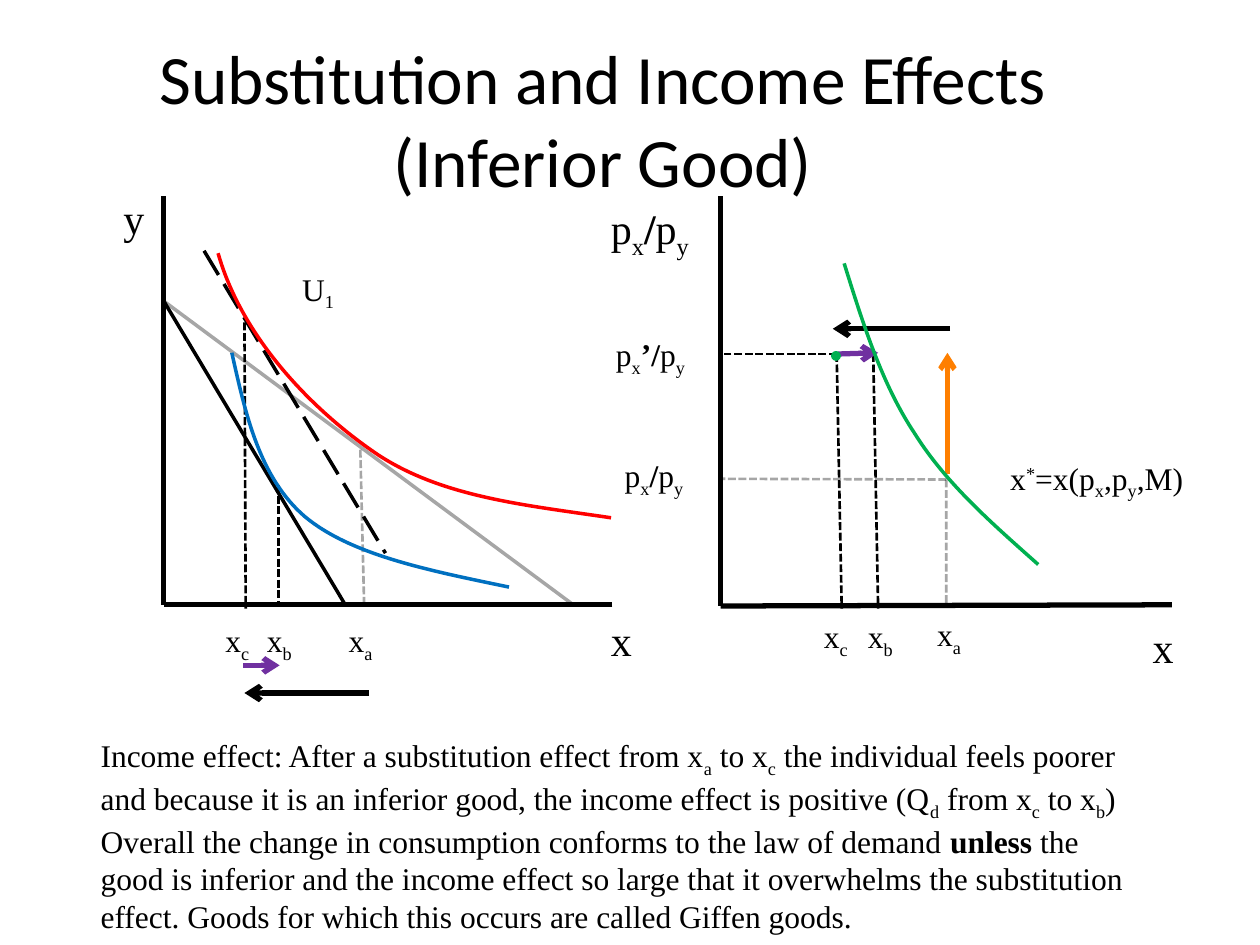
"""Build a slide on substitution and income effects for an inferior good."""
from dataclasses import dataclass

import pptx
import pptx.dml.color
import pptx.enum.dml
import pptx.enum.shapes
import pptx.enum.text
import pptx.oxml.ns
import pptx.oxml.xmlchemy
import pptx.util


@dataclass(frozen=True)
class Theme:
    title_font: str = "Calibri"
    body_font: str = "Times New Roman"
    title_size: float = 39.6
    axis_size: float = 24
    body_size: float = 18
    black: str = "000000"
    red: str = "FF0000"
    blue: str = "0070C0"
    green: str = "00B050"
    purple: str = "7030A0"
    orange: str = "FE7F00"


theme = Theme()


def points(*values):
    """Turn numbers into lengths in points."""
    return [pptx.util.Pt(value) for value in values]


def add_runs(paragraph, markup, size):
    """Write runs split by |, where _ is subscript, ^ superscript and ! bold."""
    for part in markup.split("|"):
        mark = part[0] if part[0] in "_^!" else ""
        run = paragraph.add_run()
        run.text = part[len(mark):]
        run.font.name = theme.body_font
        run.font.size = pptx.util.Pt(size)
        run.font.color.rgb = pptx.dml.color.RGBColor.from_string(theme.black)
        if mark == "!":
            run.font.bold = True
        elif mark:
            run.font._element.set("baseline", "-25000" if mark == "_" else "30000")


presentation = pptx.Presentation()
presentation.slide_width, presentation.slide_height = points(720, 540)
slide = presentation.slides.add_slide(presentation.slide_layouts[5])

title = slide.shapes.title
title.left, title.top, title.width, title.height = points(36, 21.6, 617, 92.2)
title.text_frame.vertical_anchor = pptx.enum.text.MSO_ANCHOR.MIDDLE
paragraph = title.text_frame.paragraphs[0]
paragraph.alignment = pptx.enum.text.PP_ALIGN.CENTER
run = paragraph.add_run()
run.text = "Substitution and Income Effects (Inferior Good)"
run.font.name = theme.title_font
run.font.size = pptx.util.Pt(theme.title_size)
run.font.color.rgb = pptx.dml.color.RGBColor.from_string(theme.black)

left_axis, right_axis, axis_top, base = 93.6, 411.8, 112.3, 345.6
intercept, old_price, new_price = 172.1, 274, 202.3
long_dash = pptx.enum.dml.MSO_LINE.LONG_DASH
short_dash = pptx.enum.dml.MSO_LINE.SQUARE_DOT
styles = {
    "axis": (theme.black, 3, None, None, False),
    "budget": (theme.black, 2, None, None, False),
    "old budget": (theme.black, 2, None, 35, False),
    "compensated": (theme.black, 2, long_dash, None, False),
    "guide": (theme.black, 1.5, short_dash, None, False),
    "old guide": (theme.black, 1.5, short_dash, 35, False),
    "substitution": (theme.black, 3, None, None, True),
    "income": (theme.purple, 3, None, None, True),
    "price": (theme.orange, 3, None, None, True),
}
lines = [
    ("axis", left_axis, axis_top, left_axis, base),
    ("axis", 349.9, base, left_axis, base),
    ("axis", right_axis, axis_top, right_axis, 346.3),
    ("axis", 669.6, base, right_axis, 346.3),
    ("old budget", left_axis, intercept, 327.6, base),
    ("budget", left_axis, intercept, 197.3, base),
    ("compensated", 116.6, 143.3, 220.3, 316.1),
    ("old guide", 205.9, 257, 208.1, 346.3),
    ("guide", 159.1, 277.2, 159.1, base),
    ("guide", 139.7, 184.3, 140.4, 347.8),
    ("old guide", 540.7, old_price, 540.7, 346.3),
    ("old guide", 540.7, old_price, right_axis, 273.6),
    ("guide", 478.1, new_price, right_axis, new_price),
    ("guide", 478.1, new_price, 481, 347.8),
    ("guide", 499, new_price, 501.8, 347.8),
    ("substitution", 542.9, 187.9, 475.9, 187.9),
    ("substitution", 211, 396, 139.7, 396),
    ("income", 139, 380.2, 159.8, 380.2),
    ("income", 478.8, new_price, 501.8, 201.6),
    ("price", 541.4, 270.7, 541.4, 201.6),
]
for style, *ends in lines:
    color, width, dash, opacity, arrow = styles[style]
    connector = slide.shapes.add_connector(
        pptx.enum.shapes.MSO_CONNECTOR.STRAIGHT, *points(*ends))
    connector.line.color.rgb = pptx.dml.color.RGBColor.from_string(color)
    connector.line.width = pptx.util.Pt(width)
    if dash:
        connector.line.dash_style = dash
    properties = connector._element.spPr
    if opacity:
        alpha = pptx.oxml.xmlchemy.OxmlElement("a:alpha")
        alpha.set("val", str(opacity * 1000))
        properties.find(".//" + pptx.oxml.ns.qn("a:srgbClr")).append(alpha)
    if arrow:
        tail = pptx.oxml.xmlchemy.OxmlElement("a:tailEnd")
        tail.set("type", "arrow")
        properties.find(pptx.oxml.ns.qn("a:ln")).append(tail)
    properties.append(pptx.oxml.xmlchemy.OxmlElement("a:effectLst"))

dot = slide.shapes.add_shape(
    pptx.enum.shapes.MSO_SHAPE.OVAL, *points(475.9, 201.6, 3.6, 3.6))
dot.shadow.inherit = False
dot.fill.solid()
dot.fill.fore_color.rgb = pptx.dml.color.RGBColor.from_string(theme.green)
dot.line.color.rgb = pptx.dml.color.RGBColor.from_string(theme.green)
dot.line.width = pptx.util.Pt(2)

curves = [
    (theme.blue, [(132.5, 201.6), (140.4, 236.9), (148.3, 272.9), (174.2, 295.2),
                  (200.9, 317.5), (246.2, 326.2), (290.9, 335.5)]),
    (theme.red, [(124.6, 144.7), (138.2, 193), (178.6, 234.7), (216, 259.9),
                 (253.4, 284.4), (301, 288.7), (349.2, 295.9)]),
    (theme.green, [(482.4, 150.5), (493.2, 185), (504, 219.6), (522.7, 247.7),
                   (540.7, 276.5), (567.4, 299.5), (593.3, 322.6)]),
]
for color, controls in curves:
    start, *others = [points(*control) for control in controls]
    builder = slide.shapes.build_freeform(*start)
    builder.add_line_segments(others, close=False)
    curve = builder.convert_to_shape()
    curve.shadow.inherit = False
    curve.fill.background()
    curve.line.color.rgb = pptx.dml.color.RGBColor.from_string(color)
    curve.line.width = pptx.util.Pt(2)
    outline = curve._element.spPr.find(".//" + pptx.oxml.ns.qn("a:path"))
    segments = outline.findall(pptx.oxml.ns.qn("a:lnTo"))
    for first in range(0, len(segments), 3):
        bezier = pptx.oxml.xmlchemy.OxmlElement("a:cubicBezTo")
        outline.append(bezier)
        for segment in segments[first:first + 3]:
            bezier.append(segment[0])
            outline.remove(segment)

small, large = theme.body_size, theme.axis_size
labels = [
    ("y", 63.4, 106.6, 26.6, large, False),
    ("x", 342, 347.8, 21.6, large, True),
    ("x", 651.6, 351.4, 27.4, large, True),
    ("p|_x|!/|p|_y", 342, 112.3, 69.8, large, True),
    ("p|_x|!/|p|_y", 349.9, 257, 54.7, small, True),
    ("p|_x|!’/|p|_y", 344.9, 187.9, 59.8, small, True),
    ("U|_1", 165.6, 150.5, 33.8, small, False),
    ("x|^*|=x(p|_x|,p|_y|,M)", 570.2, 258.5, 115.9, small, False),
    ("x|_c", 121.7, 351.4, 28.8, small, False),
    ("x|_b", 145.4, 351.4, 29.5, small, False),
    ("x|_a", 192.2, 351.4, 28.8, small, False),
    ("x|_c", 463.7, 349.2, 28.8, small, False),
    ("x|_b", 488.9, 349.2, 29.5, small, False),
    ("x|_a", 528.5, 347.8, 28.8, small, False),
    ("Income effect: After a substitution effect from x|_a| to x|_c| the individual feels "
     "poorer and because it is an inferior good, the income effect is positive (Q|_d| from x"
     "|_c| to x|_b|)\n"
     "Overall the change in consumption conforms to the law of demand |!unless| the good is "
     "inferior and the income effect so large that it overwhelms the substitution effect. "
     "Goods for which this occurs are called Giffen goods.", 50.4, 416.9, 605.5, small, True),
]
for markup, left, top, width, size, wrap in labels:
    height = 116.6 if "\n" in markup else size * 1.2 + 7.2
    box = slide.shapes.add_textbox(*points(left, top, width, height))
    frame = box.text_frame
    frame.word_wrap = wrap
    frame.auto_size = pptx.enum.text.MSO_AUTO_SIZE.SHAPE_TO_FIT_TEXT
    for index, content in enumerate(markup.split("\n")):
        paragraph = frame.add_paragraph() if index else frame.paragraphs[0]
        add_runs(paragraph, content, size)

presentation.save("out.pptx")
